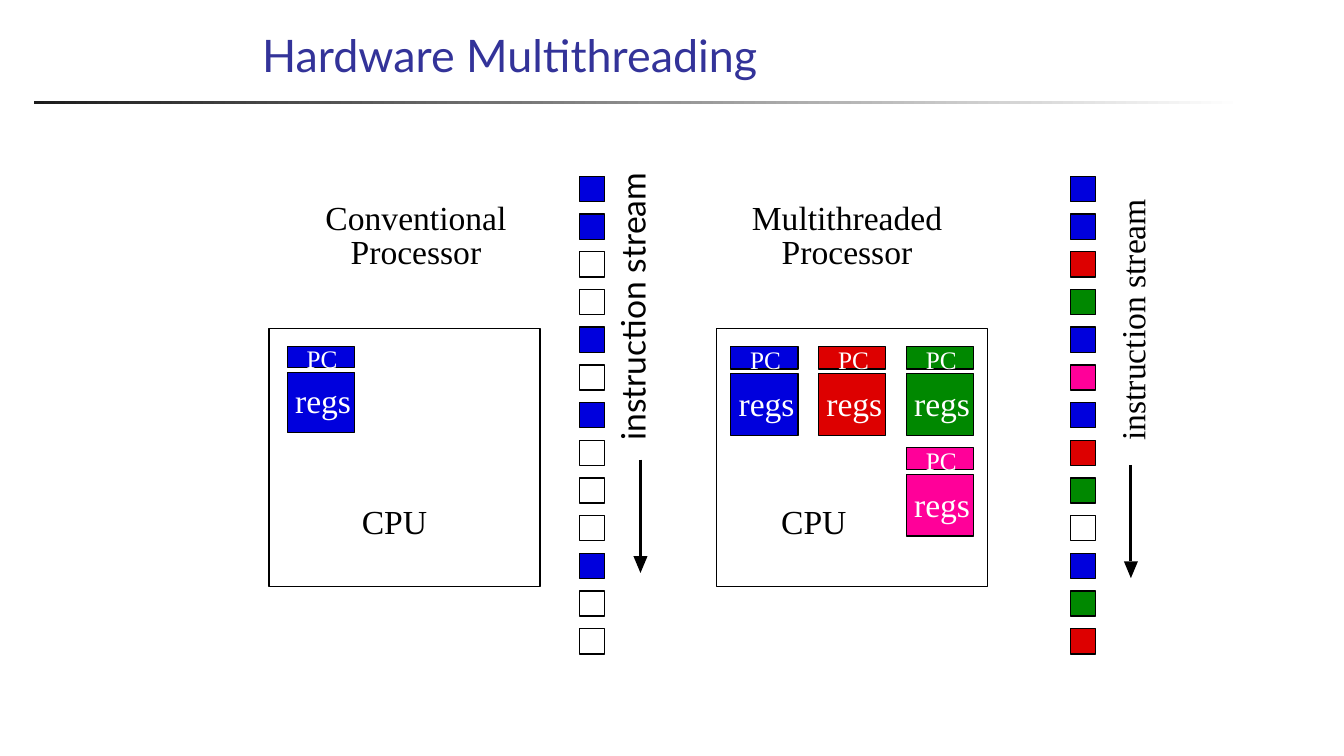
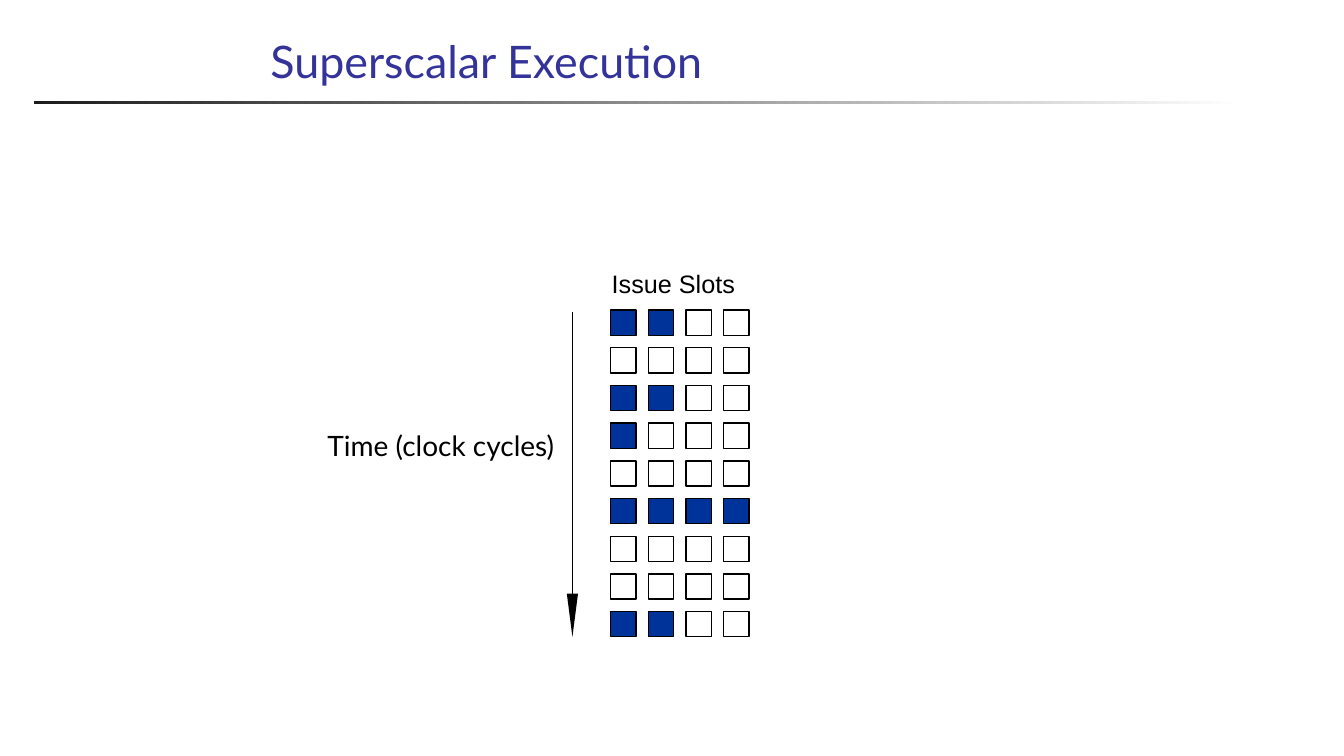
from lxml import etree
from pptx import Presentation
from pptx.dml.color import RGBColor
from pptx.enum.shapes import MSO_CONNECTOR, MSO_SHAPE
from pptx.enum.text import MSO_ANCHOR, MSO_AUTO_SIZE as AUTO, PP_ALIGN
from pptx.oxml.ns import qn
from pptx.util import Pt

BLACK = RGBColor(0x00, 0x00, 0x00)
WHITE = RGBColor(0xFF, 0xFF, 0xFF)
CHARCOAL = RGBColor(0x1C, 0x1C, 0x1C)
INDIGO = RGBColor(0x33, 0x33, 0x99)
NAVY = RGBColor(0x00, 0x33, 0x99)
BLUE = RGBColor(0x00, 0x00, 0xDD)
RED = RGBColor(0xDD, 0x00, 0x00)
GREEN = RGBColor(0x00, 0x88, 0x00)
PINK = RGBColor(0xFF, 0x00, 0x99)

SANS, SERIF, PLAIN = "Lato", "Times New Roman", "Arial"
CELL_COLORS = {"B": BLUE, "R": RED, "G": GREEN, "P": PINK,
               "N": NAVY, "W": WHITE, ".": None}
CELL, PITCH = 18, 26.92


class Deck:
    """Holds the presentation, its style and the slide being drawn."""

    def __init__(self):
        self.prs = Presentation()
        self.prs.slide_width, self.prs.slide_height = Pt(960), Pt(540)
        self.layout = self.prs.slide_layouts[5]
        self.s = None

    def slide(self, title, *box):
        first = self.s is None
        self.s = self.prs.slides.add_slide(self.layout)
        if first:
            self.add_layout_rule()
        sp = self.s.shapes.title
        sp.left, sp.top, sp.width, sp.height = map(Pt, box)
        tf = sp.text_frame
        tf.auto_size, tf.vertical_anchor = AUTO.NONE, MSO_ANCHOR.BOTTOM
        self.set_text(tf, title, SANS, 32, INDIGO)

    def add_layout_rule(self):
        """Draws the fading rule and moves it to the shared layout."""
        sp = self.rect(24, 72, 864, 2.2, line=None)
        sp.fill.gradient()
        sp.fill.gradient_angle = 0
        for stop, color in zip(sp.fill.gradient_stops, (CHARCOAL, WHITE)):
            stop.color.rgb = color
        self.layout.shapes.element.append(sp.element)

    def set_text(self, tf, text, font, size, color, align=PP_ALIGN.LEFT,
                 spacing=None):
        tf.text = text
        for p in tf.paragraphs:
            p.alignment, p.line_spacing = align, spacing
            for r in p.runs:
                for name, value in {"name": font, "size": Pt(size)}.items():
                    setattr(r.font, name, value)
                r.font.color.rgb = color

    def paint(self, sp, fill, line):
        sp.shadow.inherit = False
        if fill is None:
            sp.fill.background()
        else:
            sp.fill.solid()
            sp.fill.fore_color.rgb = fill
        if line is None:
            sp.line.fill.background()
        else:
            sp.line.color.rgb, sp.line.width = line, Pt(1)
        return sp

    def rect(self, x, y, w, h, fill=None, line=BLACK):
        sp = self.s.shapes.add_shape(MSO_SHAPE.RECTANGLE,
                                     *map(Pt, (x, y, w, h)))
        return self.paint(sp, fill, line)

    def label(self, text, x, y, w, h, font=SERIF, size=24, color=BLACK,
              **style):
        """Tight one-piece label without insets or wrapping."""
        sp = self.s.shapes.add_textbox(*map(Pt, (x, y, w, h)))
        tf = sp.text_frame
        for side in ("left", "top", "right", "bottom"):
            setattr(tf, f"margin_{side}", 0)
        tf.word_wrap, tf.auto_size = False, AUTO.SHAPE_TO_FIT_TEXT
        self.set_text(tf, text, font, size, color, **style)

    def caption(self, text, x, y, w, h, font, size, spacing=None, rotation=0):
        sp = self.s.shapes.add_textbox(*map(Pt, (x, y, w, h)))
        sp.rotation = rotation
        sp.text_frame.word_wrap = True
        self.set_text(sp.text_frame, text, font, size, BLACK, spacing=spacing)

    def cells(self, x, y, rows):
        """Draws a grid of squares; each letter in a row names a colour."""
        for i, row in enumerate(rows):
            for j, key in enumerate(row):
                self.rect(x + j * PITCH, y + i * PITCH, CELL, CELL,
                          CELL_COLORS[key])

    def arrow(self, x, top, tip, head_w, head_h, weight):
        """Draws a downward arrow with a head of any proportion."""
        base = tip - head_h
        ln = self.s.shapes.add_connector(MSO_CONNECTOR.STRAIGHT,
                                         *map(Pt, (x, top, x, base)))
        ln.line.color.rgb, ln.line.width = BLACK, Pt(weight)
        etree.SubElement(ln.element.spPr, qn("a:effectLst"))
        fb = self.s.shapes.build_freeform(Pt(x), Pt(tip))
        fb.add_line_segments([(Pt(x - head_w / 2), Pt(base)),
                              (Pt(x + head_w / 2), Pt(base))], close=True)
        self.paint(fb.convert_to_shape(), BLACK, None)

    def context(self, x, y, color, trim=0):
        """Draws a program counter over its registers."""
        self.rect(x, y, 48, 15.8 - trim, color)
        self.rect(x, y + 19.3 - trim, 48, 43.9 - trim, color)
        self.label("PC", x + 13.9, y - 1.5 - trim, 22.3, 21.6,
                   size=18, color=WHITE)
        self.label("regs", x + 5.6, y + 25.9 - 2 * trim, 40.3, 28.8,
                   color=WHITE)

    def processor(self, name, x, name_x, cpu_x):
        self.rect(x, 234.7, 193.7, 184.3)
        self.label(f"{name}\nProcessor", name_x, 145.4, 140, 48,
                   align=PP_ALIGN.CENTER, spacing=Pt(24))
        self.label("CPU", cpu_x, 357.8, 47.5, 28.8)


def multithreading(deck):
    deck.slide("Hardware Multithreading", 180, 18, 720, 44)
    deck.processor("Conventional", 192.2, 227.1, 258.5)
    deck.processor("Multithreaded", 511.9, 535, 558)

    top, step = 247.7, 62.7
    deck.context(205.2, top, BLUE, trim=1)
    for i, color in enumerate((BLUE, RED, GREEN)):
        deck.context(522 + i * step, top, color)
    deck.context(522 + 2 * step, top + 72, PINK)

    streams = (
        ("BB..B.B...B..", 414, 347, SANS, 0.9, 457.5, 328.3),
        ("BBRGBPBRG.BGR", 764.6, 700.6, SERIF, None, 807.8, 332),
    )
    for pattern, x, text_x, font, spacing, arrow_x, arrow_y in streams:
        deck.cells(x, 126, pattern)
        deck.caption("instruction stream", text_x, 195.8, 216, 36, font, 24,
                     spacing, rotation=270)
        deck.arrow(arrow_x, arrow_y, arrow_y + 81, 10, 12, 2)


def superscalar(deck):
    deck.slide("Superscalar Execution", 186, 0, 612, 66)
    deck.caption("Time (clock cycles)", 226.8, 305.3, 237, 29.5, SANS, 20, 0.9)
    deck.label("Issue Slots", 437, 191.5, 88.6, 21.6, PLAIN, 18)
    deck.cells(436.2, 221.5, ("NNWW", "WWWW", "NNWW", "NWWW", "WWWW",
                              "NNNN", "WWWW", "WWWW", "NNWW"))
    deck.arrow(408.9, 223.2, 455, 8, 31, 1)


def main():
    deck = Deck()
    multithreading(deck)
    superscalar(deck)
    deck.prs.save("out.pptx")


if __name__ == "__main__":
    main()
